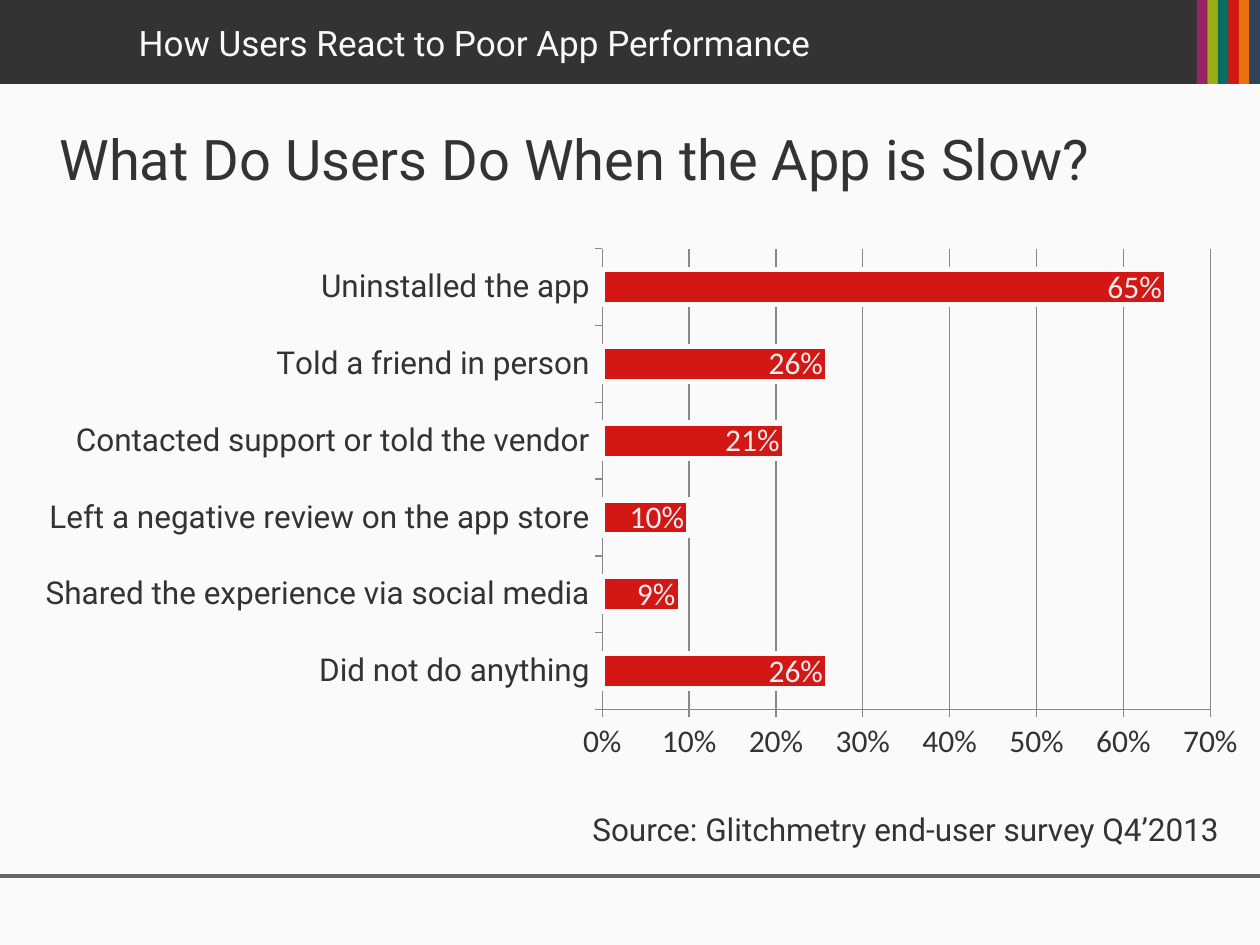
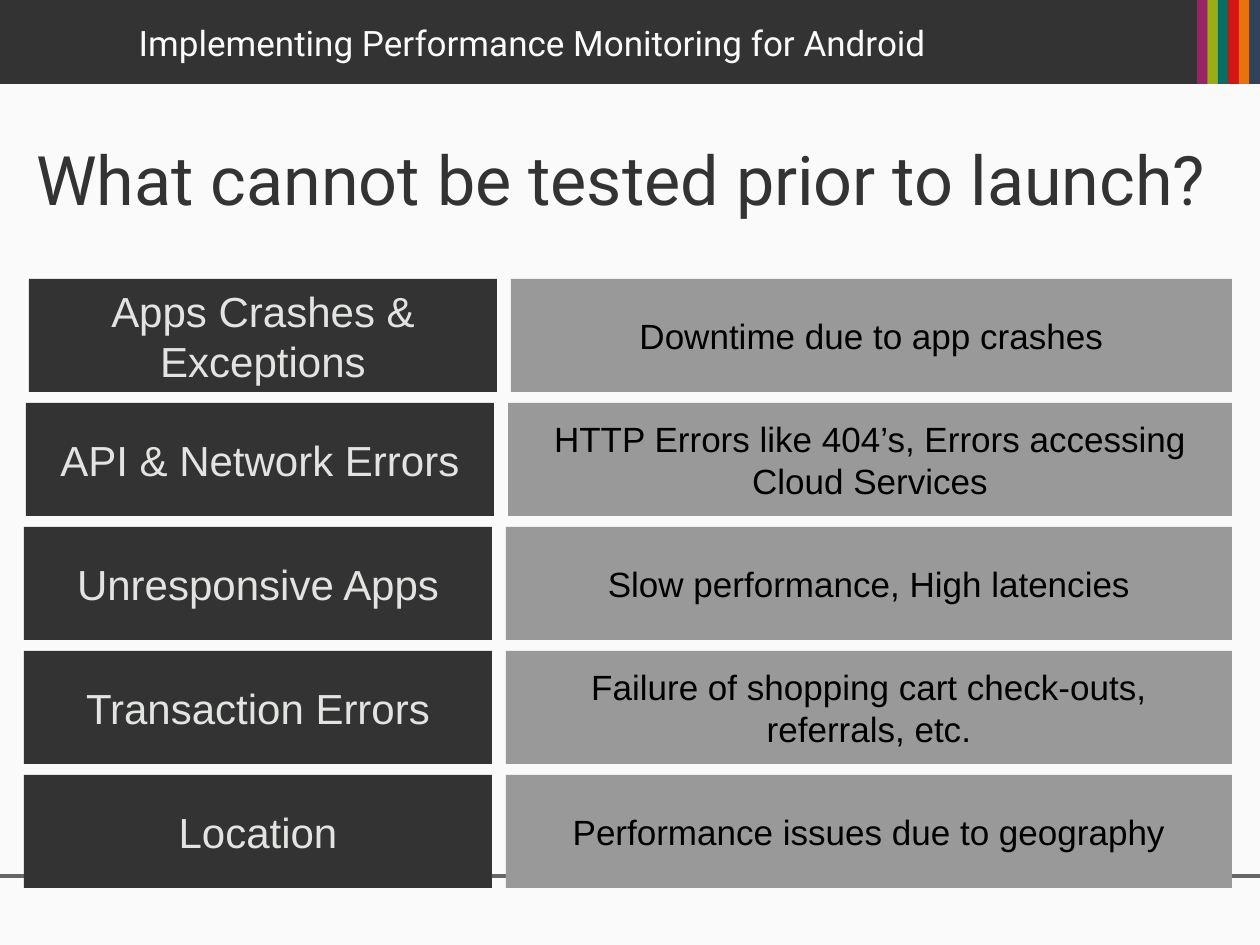
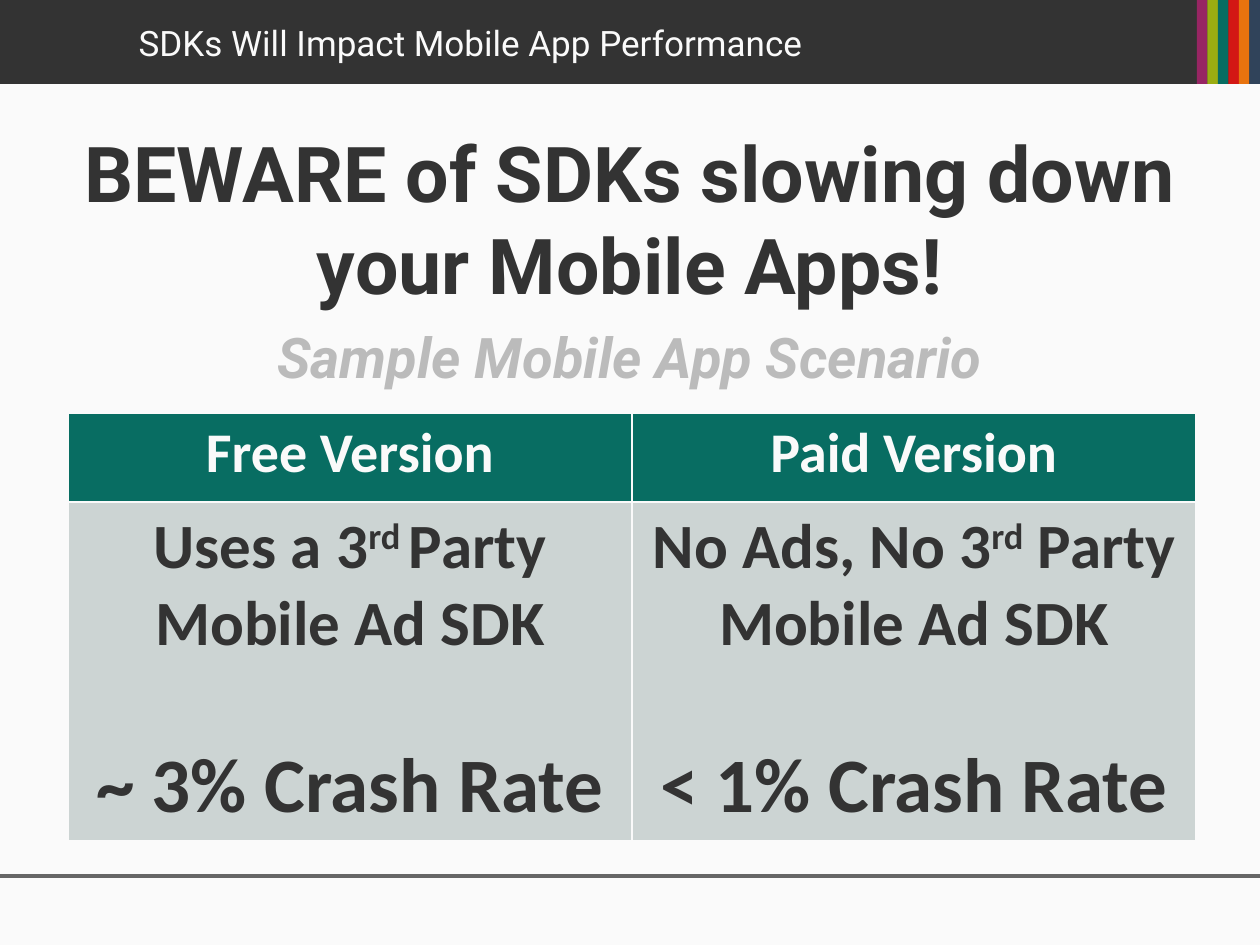
"""Build three slides on mobile app performance: a bar chart, a risk grid and a comparison table."""
import lxml.etree
import pptx
import pptx.chart.data
import pptx.dml.color
import pptx.enum.chart
import pptx.enum.shapes
import pptx.enum.text
import pptx.oxml.ns
import pptx.util

RGBColor = pptx.dml.color.RGBColor
PAPER = RGBColor(0xFA, 0xFA, 0xFA)
CHARCOAL = RGBColor(0x33, 0x33, 0x33)
RULE_GRAY = RGBColor(0x66, 0x66, 0x66)
GRID_GRAY = RGBColor(0x88, 0x88, 0x88)
DETAIL_GRAY = RGBColor(0x99, 0x99, 0x99)
SUBTITLE_GRAY = RGBColor(0xBB, 0xBB, 0xBB)
TOPIC_TEXT = RGBColor(0xE2, 0xE4, 0xE1)
LABEL_TEXT = RGBColor(0xED, 0xED, 0xED)
CELL_GRAY = RGBColor(0xCC, 0xD4, 0xD3)
BLACK = RGBColor(0x00, 0x00, 0x00)
PURPLE = RGBColor(0x97, 0x25, 0x63)
LIME = RGBColor(0x9B, 0xAD, 0x12)
TEAL = RGBColor(0x08, 0x6D, 0x62)
RED = RGBColor(0xD3, 0x17, 0x14)
ORANGE = RGBColor(0xE8, 0x73, 0x0E)
NAVY = RGBColor(0x30, 0x43, 0x5A)
STRIPES = [PURPLE, LIME, TEAL, RED, ORANGE, NAVY]

SLIDE_WIDTH, SLIDE_HEIGHT = 1260, 945
BAND_HEIGHT, STRIPES_LEFT, FOOTER_TOP = 84, 1197, 876
TITLE_LEFT = 126

SURVEY = {
    "title": "How Users React to Poor App Performance",
    "heading": "What Do Users Do When the App is Slow?",
    "source": "Source: Glitchmetry end-user survey Q4’2013",
    "answers": [
        ("Did not do anything", 0.26),
        ("Shared the experience via social media", 0.09),
        ("Left a negative review on the app store", 0.1),
        ("Contacted support or told the vendor", 0.21),
        ("Told a friend in person", 0.26),
        ("Uninstalled the app", 0.65),
    ],
}
RISKS = {
    "title": "Implementing Performance Monitoring for Android",
    "heading": "What cannot be tested prior to launch?",
    "rows": [
        (29, "Apps Crashes & Exceptions", "Downtime due to app crashes"),
        (26, "API & Network Errors", "HTTP Errors like 404’s, Errors accessing Cloud Services"),
        (24, "Unresponsive Apps", "Slow performance, High latencies"),
        (24, "Transaction Errors", "Failure of shopping cart check-outs, referrals, etc."),
        (24, "Location", "Performance issues due to geography"),
    ],
}
SDKS = {
    "title": "SDKs Will Impact Mobile App Performance",
    "heading": "BEWARE of SDKs slowing down your Mobile Apps!",
    "subtitle": "Sample Mobile App Scenario",
    "versions": [
        ("Free Version", ("Uses a 3", "rd ", "Party Mobile Ad SDK"), "~ 3% Crash Rate"),
        ("Paid Version", ("No Ads, No 3", "rd", " Party Mobile Ad SDK"), "< 1% Crash Rate"),
    ],
}


def px(length):
    """Turn a length in px into EMU."""
    return pptx.util.Emu(round(length * 914400 / 126))


def add_run(paragraph, text, font, size, color, bold=False, italic=False):
    """Add one formatted run to a paragraph."""
    run = paragraph.add_run()
    run.text = text
    run.font.name = font
    run.font.size = pptx.util.Pt(size)
    run.font.color.rgb = color
    run.font.bold = bold
    run.font.italic = italic
    return run


def add_box(slide, left, top, width, height, fill):
    """Add a flat rectangle without outline."""
    shape = slide.shapes.add_shape(
        pptx.enum.shapes.MSO_SHAPE.RECTANGLE, px(left), px(top), px(width), px(height))
    shape.shadow.inherit = False
    shape.fill.solid()
    shape.fill.fore_color.rgb = fill
    shape.line.fill.background()
    return shape


def add_label_box(slide, left, top, width, height, fill, text, size, color):
    """Add a rectangle with centred text."""
    shape = add_box(slide, left, top, width, height, fill)
    shape.text_frame.word_wrap = True
    shape.text_frame.vertical_anchor = pptx.enum.text.MSO_ANCHOR.MIDDLE
    paragraph = shape.text_frame.paragraphs[0]
    paragraph.alignment = pptx.enum.text.PP_ALIGN.CENTER
    add_run(paragraph, text, "Arial", size, color)


def add_text(slide, left, top, width, height, text, size, bold=False):
    """Add a wrapping text box in the heading font and return its text frame."""
    frame = slide.shapes.add_textbox(px(left), px(top), px(width), px(height)).text_frame
    frame.word_wrap = True
    add_run(frame.paragraphs[0], text, "Roboto", size, CHARCOAL, bold)
    return frame


def add_titled_slide(presentation, layout, title):
    """Add a slide with its title in the band."""
    slide = presentation.slides.add_slide(layout)
    shape = slide.shapes.title
    shape.left, shape.top = px(TITLE_LEFT), px(0)
    shape.width, shape.height = px(SLIDE_WIDTH - TITLE_LEFT), px(BAND_HEIGHT)
    shape.text_frame.vertical_anchor = pptx.enum.text.MSO_ANCHOR.MIDDLE
    paragraph = shape.text_frame.paragraphs[0]
    paragraph.alignment = pptx.enum.text.PP_ALIGN.LEFT
    add_run(paragraph, title, "Roboto", 20, PAPER)
    return slide


def decorate_layout(layout, slide):
    """Draw band, stripes and footer rule on a slide and move them into its layout."""
    for placeholder in list(layout.placeholders):
        if placeholder.placeholder_format.type != pptx.enum.shapes.PP_PLACEHOLDER.TITLE:
            placeholder.element.getparent().remove(placeholder.element)
    layout.background.fill.solid()
    layout.background.fill.fore_color.rgb = PAPER
    shapes = [add_box(slide, 0, 0, SLIDE_WIDTH, BAND_HEIGHT, CHARCOAL)]
    stripe_width = (SLIDE_WIDTH - STRIPES_LEFT) / len(STRIPES)
    for index, color in enumerate(STRIPES):
        left = STRIPES_LEFT + index * stripe_width
        shapes.append(add_box(slide, left, 0, stripe_width, BAND_HEIGHT, color))
    rule = slide.shapes.add_connector(
        pptx.enum.shapes.MSO_CONNECTOR.STRAIGHT,
        px(0), px(FOOTER_TOP), px(SLIDE_WIDTH), px(FOOTER_TOP))
    rule.line.color.rgb = RULE_GRAY
    rule.line.width = pptx.util.Pt(2)
    lxml.etree.SubElement(rule.element.spPr, pptx.oxml.ns.qn("a:effectLst"))
    for shape in shapes + [rule]:
        layout.shapes.element.append(shape.element)


def set_plot_layout(chart, **fractions):
    """Fix the inner plot area as fractions of the chart."""
    qn = pptx.oxml.ns.qn
    plot_area = chart._chartSpace.chart.plotArea
    for existing in plot_area.findall(qn("c:layout")):
        plot_area.remove(existing)
    layout = lxml.etree.Element(qn("c:layout"))
    manual = lxml.etree.SubElement(layout, qn("c:manualLayout"))
    settings = {"layoutTarget": "inner", "xMode": "edge", "yMode": "edge", **fractions}
    for name, value in settings.items():
        lxml.etree.SubElement(manual, qn("c:" + name)).set("val", str(value))
    plot_area.insert(0, layout)


def fill_survey(slide):
    """Add the survey heading, bar chart and source."""
    data = pptx.chart.data.CategoryChartData(number_format="0%")
    data.categories = [answer for answer, share in SURVEY["answers"]]
    data.add_series("Series 1", [share for answer, share in SURVEY["answers"]])
    chart = slide.shapes.add_chart(
        pptx.enum.chart.XL_CHART_TYPE.BAR_STACKED,
        px(19), px(238), px(1241), px(530), data).chart
    chart.has_legend = False
    chart.has_title = False
    chart.font.name = "Calibri"
    chart.font.size = pptx.util.Pt(18)
    chart.font.color.rgb = CHARCOAL
    set_plot_layout(chart, x=0.47, y=0.02, w=0.49, h=0.87)

    plot = chart.plots[0]
    plot.gap_width = 119
    plot.overlap = 100
    plot.vary_by_categories = False
    bars = plot.series[0].format
    bars.fill.solid()
    bars.fill.fore_color.rgb = RED
    bars.line.color.rgb = PAPER
    bars.line.width = pptx.util.Pt(3)
    plot.has_data_labels = True
    labels = plot.data_labels
    labels.show_value = True
    labels.position = pptx.enum.chart.XL_LABEL_POSITION.INSIDE_END
    labels.number_format = "0%"
    labels.number_format_is_linked = False
    labels.font.name = "Calibri"
    labels.font.size = pptx.util.Pt(18)
    labels.font.color.rgb = LABEL_TEXT

    value_axis, category_axis = chart.value_axis, chart.category_axis
    value_axis.minimum_scale = 0
    value_axis.maximum_scale = 0.7
    value_axis.major_unit = 0.1
    value_axis.has_major_gridlines = True
    value_axis.tick_labels.number_format = "0%"
    value_axis.tick_labels.number_format_is_linked = False
    category_axis.tick_labels.font.name = "Roboto"
    category_axis.tick_labels.font.size = pptx.util.Pt(18)
    category_axis.tick_labels.font.color.rgb = CHARCOAL
    for axis in (value_axis, category_axis):
        axis.major_tick_mark = pptx.enum.chart.XL_TICK_MARK.OUTSIDE
    for part in (value_axis, category_axis, value_axis.major_gridlines):
        part.format.line.color.rgb = GRID_GRAY
        part.format.line.width = pptx.util.Pt(0.75)

    add_text(slide, 580, 804, 680, 50, SURVEY["source"], 18)
    add_text(slide, 47, 118, 1111, 81, SURVEY["heading"], 32)


def fill_risks(slide):
    """Add the grid of risks and their details."""
    first_top, step, height = 279, 124, 113
    topic_width, gap, right = 468, 14, 1232
    for index, (left, topic, detail) in enumerate(RISKS["rows"]):
        top = first_top + index * step
        detail_left = left + topic_width + gap
        add_label_box(slide, left, top, topic_width, height, CHARCOAL, topic, 24, TOPIC_TEXT)
        add_label_box(slide, detail_left, top, right - detail_left, height,
                      DETAIL_GRAY, detail, 20, BLACK)
    add_text(slide, 24, 131, 1210, 100, RISKS["heading"], 39)


def format_cell(cell, fill):
    """Fill a cell, give it thin borders and centre its paragraphs."""
    qn = pptx.oxml.ns.qn
    cell.fill.solid()
    cell.fill.fore_color.rgb = fill
    properties = cell._tc.get_or_add_tcPr()
    for index, side in enumerate(("lnL", "lnR", "lnT", "lnB")):
        border = lxml.etree.Element(qn("a:" + side), w=str(pptx.util.Pt(1)))
        color = lxml.etree.SubElement(border, qn("a:solidFill"))
        lxml.etree.SubElement(color, qn("a:srgbClr")).set("val", str(PAPER))
        properties.insert(index, border)
    for paragraph in cell.text_frame.paragraphs:
        paragraph.alignment = pptx.enum.text.PP_ALIGN.CENTER


def fill_sdks(slide):
    """Add the warning and the table of versions."""
    frame = add_text(slide, 63, 119, 1134, 280, SDKS["heading"], 44, bold=True)
    subtitle = frame.add_paragraph()
    subtitle.space_before = pptx.util.Pt(7)
    add_run(subtitle, SDKS["subtitle"], "Roboto", 32, SUBTITLE_GRAY, bold=True, italic=True)
    for paragraph in frame.paragraphs:
        paragraph.alignment = pptx.enum.text.PP_ALIGN.CENTER

    column_width, row_heights = 564, (89, 339)
    columns = len(SDKS["versions"])
    table = slide.shapes.add_table(
        len(row_heights), columns, px(68), px(413),
        px(columns * column_width), px(sum(row_heights))).table
    for row, height in zip(table.rows, row_heights):
        row.height = px(height)
    for column, (version, parts, rate) in enumerate(SDKS["versions"]):
        table.columns[column].width = px(column_width)
        header, body = table.cell(0, column), table.cell(1, column)
        add_run(header.text_frame.paragraphs[0], version, "Calibri", 32, PAPER, bold=True)
        usage = body.text_frame.paragraphs[0]
        runs = [add_run(usage, part, "Calibri", 36, CHARCOAL, bold=True) for part in parts]
        runs[1]._r.get_or_add_rPr().set("baseline", "30000")
        crash_rate = body.text_frame.add_paragraph()
        crash_rate.space_before = pptx.util.Pt(44)
        add_run(crash_rate, rate, "Calibri", 44, CHARCOAL, bold=True)
        format_cell(header, TEAL)
        format_cell(body, CELL_GRAY)


def main():
    """Build and save the presentation."""
    presentation = pptx.Presentation()
    presentation.slide_width, presentation.slide_height = px(SLIDE_WIDTH), px(SLIDE_HEIGHT)
    layout = presentation.slide_layouts.get_by_name("Title Only")
    survey, risks, sdks = [
        add_titled_slide(presentation, layout, content["title"])
        for content in (SURVEY, RISKS, SDKS)]
    decorate_layout(layout, survey)
    fill_survey(survey)
    fill_risks(risks)
    fill_sdks(sdks)
    presentation.save("out.pptx")


if __name__ == "__main__":
    main()
